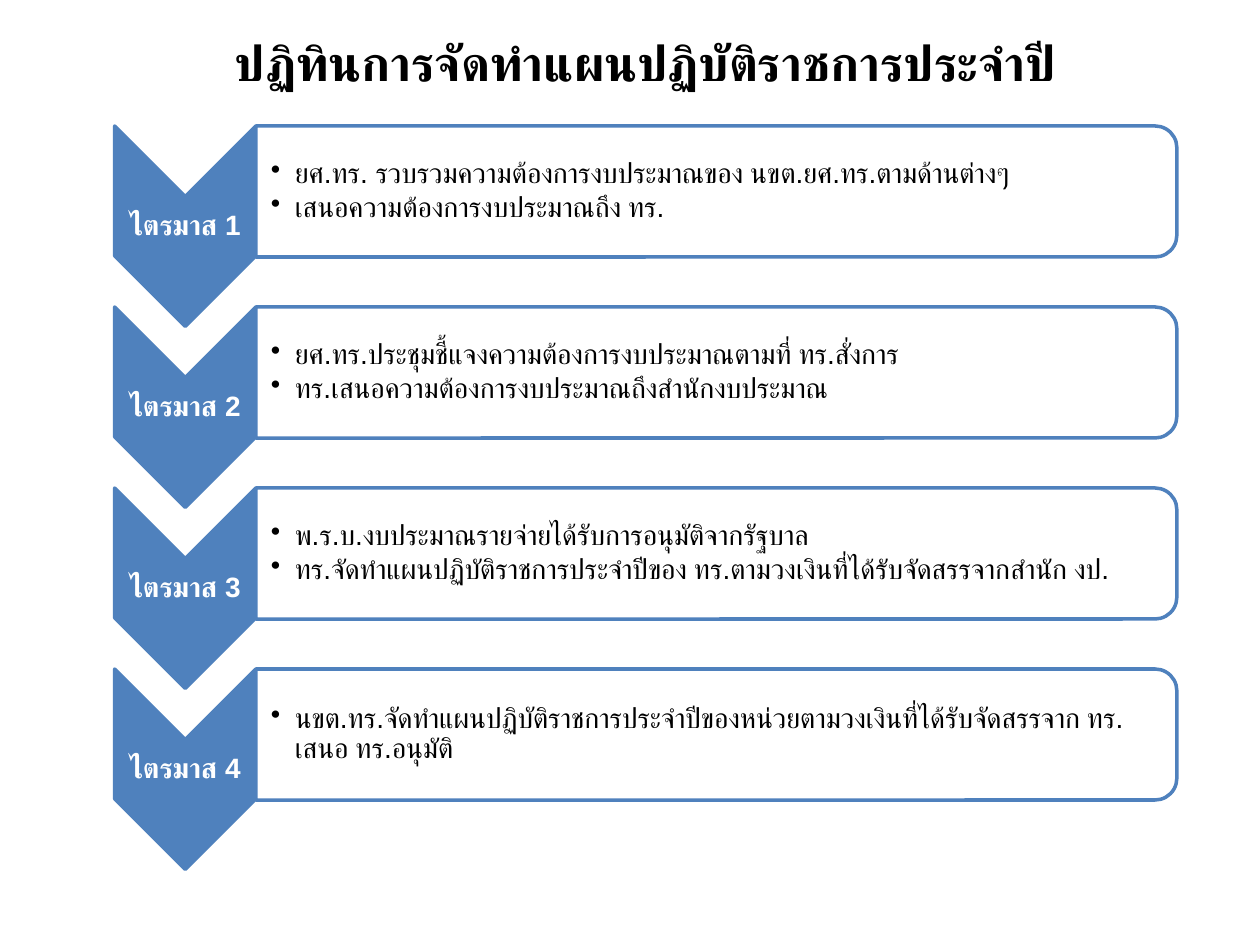
from dataclasses import dataclass

from lxml import etree
from pptx import Presentation
from pptx.dml.color import RGBColor
from pptx.enum.shapes import MSO_SHAPE
from pptx.enum.text import MSO_ANCHOR, PP_ALIGN
from pptx.oxml.ns import qn
from pptx.util import Inches, Pt

CHEVRON = MSO_SHAPE.CHEVRON
PANEL = MSO_SHAPE.ROUND_2_SAME_RECTANGLE
MIDDLE = MSO_ANCHOR.MIDDLE
CENTER = PP_ALIGN.CENTER


@dataclass(frozen=True)
class Theme:
    """Colours, fonts and type sizes of the slide."""
    blue: RGBColor = RGBColor(0x4F, 0x81, 0xBD)
    white: RGBColor = RGBColor(0xFF, 0xFF, 0xFF)
    black: RGBColor = RGBColor(0, 0, 0)
    title_font: str = "Calibri"
    body_font: str = "Arial"
    title_size: int = 28
    body_size: int = 16
    line_width: int = 2


THEME = Theme()

TITLE = "ปฏิทินการจัดทำแผนปฏิบัติราชการประจำปี"
QUARTERS = [
    ("ไตรมาส 1", [
        "ยศ.ทร. รวบรวมความต้องการงบประมาณของ นขต.ยศ.ทร.ตามด้านต่างๆ",
        "เสนอความต้องการงบประมาณถึง ทร.",
    ]),
    ("ไตรมาส 2", [
        "ยศ.ทร.ประชุมชี้แจงความต้องการงบประมาณตามที่ ทร.สั่งการ",
        "ทร.เสนอความต้องการงบประมาณถึงสำนักงบประมาณ",
    ]),
    ("ไตรมาส 3", [
        "พ.ร.บ.งบประมาณรายจ่ายได้รับการอนุมัติจากรัฐบาล",
        "ทร.จัดทำแผนปฏิบัติราชการประจำปีของ ทร.ตามวงเงินที่ได้รับจัดสรรจากสำนัก งป.",
    ]),
    ("ไตรมาส 4", [
        "นขต.ทร.จัดทำแผนปฏิบัติราชการประจำปีของหน่วยตามวงเงินที่ได้รับจัดสรรจาก ทร. "
        "เสนอ ทร.อนุมัติ",
    ]),
]

CHEVRON_WIDTH, CHEVRON_HEIGHT = Inches(1.12), Inches(1.59)
PANEL_HEIGHT = Inches(1.04)
INSET = Inches(0.01)


def add_turned_shape(page, kind, left, top, width, height, fill):
    """Add a shape turned a quarter clockwise that covers the given box."""
    shift = (width - height) // 2
    shape = page.shapes.add_shape(kind, left + shift, top - shift, height, width)
    shape.rotation = 90
    shape.shadow.inherit = False
    shape.fill.solid()
    shape.fill.fore_color.rgb = fill
    shape.line.color.rgb = THEME.blue
    shape.line.width = Pt(THEME.line_width)
    return shape


def add_text_box(page, left, top, width, height, left_inset=INSET):
    """Add a wrapping, vertically centred text box and return its frame."""
    frame = page.shapes.add_textbox(left, top, width, height).text_frame
    frame.word_wrap = True
    frame.vertical_anchor = MIDDLE
    frame.margin_left = left_inset
    frame.margin_top = frame.margin_right = frame.margin_bottom = INSET
    return frame


def style_para(para, text, color, space_after, bold=False):
    """Fill a body paragraph and set its spacing and font."""
    para.text = text
    para.line_spacing = 0.9
    para.space_after = Pt(space_after)
    para.font.name = THEME.body_font
    para.font.size = Pt(THEME.body_size)
    para.font.bold = bold
    para.font.color.rgb = color


def add_bullet(para):
    """Give a paragraph a round bullet with a hanging indent."""
    para.level = 1
    properties = para._p.get_or_add_pPr()
    properties.set("marL", str(Inches(0.19)))
    properties.set("indent", str(-Inches(0.19)))
    etree.SubElement(properties, qn("a:buChar"), char="•")


def add_title(page, left, top, width, height):
    """Place the slide title in its box."""
    frame = page.shapes.add_textbox(left, top, width, height).text_frame
    frame.word_wrap = True
    para = frame.paragraphs[0]
    para.text = TITLE
    para.alignment = CENTER
    para.font.name = THEME.title_font
    para.font.size = Pt(THEME.title_size)
    para.font.bold = True
    para.font.color.rgb = THEME.black


def add_quarter(page, left, top, width, label, tasks):
    """Place one quarter: a labelled chevron and its panel of tasks."""
    add_turned_shape(page, CHEVRON, left, top, CHEVRON_WIDTH, CHEVRON_HEIGHT, THEME.blue)
    label_para = add_text_box(
        page, left, top + CHEVRON_WIDTH // 2, CHEVRON_WIDTH, Inches(0.48)).paragraphs[0]
    label_para.alignment = CENTER
    style_para(label_para, label, THEME.white, 5.6, bold=True)

    panel_left = left + CHEVRON_WIDTH
    panel_width = width - CHEVRON_WIDTH
    add_turned_shape(page, PANEL, panel_left, top, panel_width, PANEL_HEIGHT, THEME.white)
    frame = add_text_box(page, panel_left, top + Inches(0.05), panel_width - Inches(0.05),
                         PANEL_HEIGHT - Inches(0.1), Inches(0.12))
    for index, task in enumerate(tasks):
        para = frame.add_paragraph() if index else frame.paragraphs[0]
        add_bullet(para)
        style_para(para, task, THEME.black, 2.4)


def add_calendar(page, left, top, width, height):
    """Stack the quarters evenly in the given box."""
    pitch = (height - CHEVRON_HEIGHT) // (len(QUARTERS) - 1)
    for index, (label, tasks) in enumerate(QUARTERS):
        add_quarter(page, left, top + index * pitch, width, label, tasks)


def main():
    """Build the deck and save it."""
    deck = Presentation()
    deck.slide_width, deck.slide_height = Inches(10), Inches(7.5)
    page = deck.slides.add_slide(deck.slide_layouts[6])
    add_calendar(page, Inches(0.91), Inches(1), Inches(8.43), Inches(5.9))
    add_title(page, Inches(1.46), Inches(0.21), Inches(7.32), Inches(0.57))
    deck.save("out.pptx")


if __name__ == "__main__":
    main()
